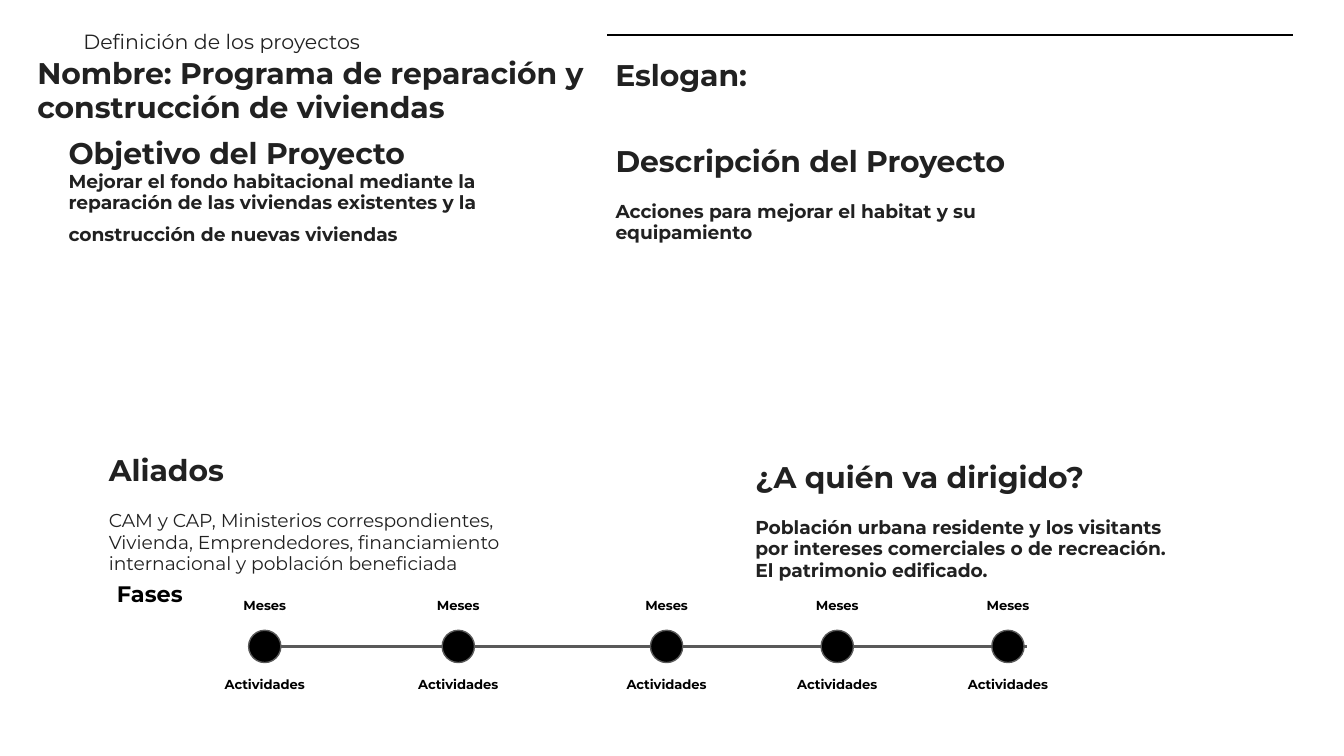
from dataclasses import dataclass

from lxml.etree import SubElement
from pptx import Presentation
from pptx.dml.color import RGBColor
from pptx.enum.shapes import MSO_CONNECTOR as Connector, MSO_SHAPE as Shape
from pptx.enum.text import MSO_ANCHOR as Anchor, MSO_AUTO_SIZE as AutoSize, PP_ALIGN as Align
from pptx.oxml.ns import qn
from pptx.util import Inches, Pt


@dataclass(frozen=True)
class Theme:
    font: str = "Montserrat"
    ink: str = "212121"
    black: str = "000000"
    gray: str = "595959"
    heading: int = 16
    phase: int = 12
    title: int = 11
    body: int = 10
    label: int = 7


THEME = Theme()
WIDTH = 10
HEIGHT = WIDTH * 9 / 16

TITLE = "Definición de los proyectos"
BANNERS = [
    ("Nombre: Programa de reparación y construcción de viviendas", (0.18, 0.33, 4.57, 0.43)),
    ("Eslogan:", (4.48, 0.34, 4.35, 0.43)),
]
# heading, body, place, body is bold, gap around the body in points
SECTIONS = [
    ("Objetivo del Proyecto",
     "Mejorar el fondo habitacional mediante la reparación de las viviendas existentes "
     "y la construcción de nuevas viviendas", (0.41, 0.92, 3.28, 1.03), True, 0),
    ("Descripción del Proyecto", "Acciones para mejorar el habitat y su equipamiento",
     (4.48, 0.98, 3.28, 1.11), True, 12),
    ("Aliados",
     "CAM y CAP, Ministerios correspondientes, Vivienda, Emprendedores, "
     "financiamiento internacional y población beneficiada",
     (0.71, 3.28, 3.28, 1.27), False, 12),
    ("¿A quién va dirigido?",
     "Población urbana residente y los visitants por intereses comerciales o de "
     "recreación. El patrimonio edificado.", (5.52, 3.33, 3.28, 1.27), True, 12),
]
PHASES = "Fases"
MILESTONES = [1.97, 3.41, 4.96, 6.23, 7.5]
MILESTONE_LABELS = [("Meses", 4.42), ("Actividades", 5.01)]
AXIS_Y, AXIS_END, DOT = 4.81, 7.64, 0.24
LABEL_SIZE = (0.96, 0.24)
LABEL_STYLE = dict(color=THEME.black, spacing=0.9)
LABEL_INSETS = (0.07, 0.04)


def color_of(code):
    return RGBColor.from_string(code)


def place(box, area, insets=(0.1, 0.1), anchor=Anchor.TOP):
    box.left, box.top, box.width, box.height = map(Inches, area)
    frame = box.text_frame
    frame.word_wrap = True
    frame.auto_size = AutoSize.NONE
    frame.vertical_anchor = anchor
    frame.margin_left = frame.margin_right = Inches(insets[0])
    frame.margin_top = frame.margin_bottom = Inches(insets[1])
    return frame


def write(para, text, size=THEME.heading, bold=True, color=THEME.ink,
          align=Align.LEFT, spacing=0.95, before=0, after=0):
    para.alignment = align
    para.line_spacing = spacing
    para.space_before, para.space_after = Pt(before), Pt(after)
    span = para.add_run()
    span.text = text
    span.font.name, span.font.size, span.font.bold = THEME.font, Pt(size), bold
    span.font.color.rgb = color_of(color)


def remove_bullet(para):
    properties = para._p.get_or_add_pPr()
    properties.set("marL", "0")
    properties.set("indent", "0")
    SubElement(properties, qn("a:buNone"))


def add_text(page, text, area, insets=(0.1, 0.1), **style):
    box = page.shapes.add_textbox(0, 0, 0, 0)
    write(place(box, area, insets).paragraphs[0], text, **style)


def add_line(page, start, end, y, color, width):
    line = page.shapes.add_connector(
        Connector.STRAIGHT, Inches(start), Inches(y), Inches(end), Inches(y))
    line.line.color.rgb = color_of(color)
    line.line.width = Pt(width)
    SubElement(line._element.spPr, qn("a:effectLst"))


def fill_section(box, heading, body, area, bold, gap):
    frame = place(box, area)
    top, detail = frame.paragraphs[0], frame.add_paragraph()
    for para in (top, detail):
        remove_bullet(para)
    write(top, heading)
    write(detail, body, size=THEME.body, bold=bold, before=gap, after=gap)
    if not gap:
        write(detail, " ")  # heading-sized space that opens up the last line


def add_timeline(page):
    add_text(page, PHASES, (0.47, 4.3, *LABEL_SIZE), LABEL_INSETS,
             size=THEME.phase, align=Align.RIGHT, **LABEL_STYLE)
    add_line(page, MILESTONES[0] - DOT / 2, AXIS_END, AXIS_Y, THEME.gray, 1.5)
    for center in MILESTONES:
        for text, top in MILESTONE_LABELS:
            add_text(page, text, (center - LABEL_SIZE[0] / 2, top, *LABEL_SIZE), LABEL_INSETS,
                     size=THEME.label, align=Align.CENTER, **LABEL_STYLE)
        dot = page.shapes.add_shape(
            Shape.OVAL, Inches(center - DOT / 2), Inches(AXIS_Y - DOT / 2),
            Inches(DOT), Inches(DOT))
        dot.shadow.inherit = False
        dot.fill.solid()
        dot.fill.fore_color.rgb = color_of(THEME.black)
        dot.line.color.rgb = color_of(THEME.gray)
        dot.line.width = Pt(0.75)


def main():
    deck = Presentation()
    deck.slide_width, deck.slide_height = Inches(WIDTH), Inches(HEIGHT)
    comparison = deck.slide_layouts[4]
    page = deck.slides.add_slide(comparison)

    title, *bodies = page.placeholders
    frame = place(title, (0.52, 0.1, 4.68, 0.43), anchor=Anchor.MIDDLE)
    write(frame.paragraphs[0], TITLE, size=THEME.title, bold=False, after=12)
    for box, section in zip(bodies, SECTIONS):
        fill_section(box, *section)

    add_line(page, 4.52, 9.62, 0.26, THEME.black, 0.75)
    for text, area in BANNERS:
        add_text(page, text, area)
    add_timeline(page)
    deck.save("out.pptx")


if __name__ == "__main__":
    main()
